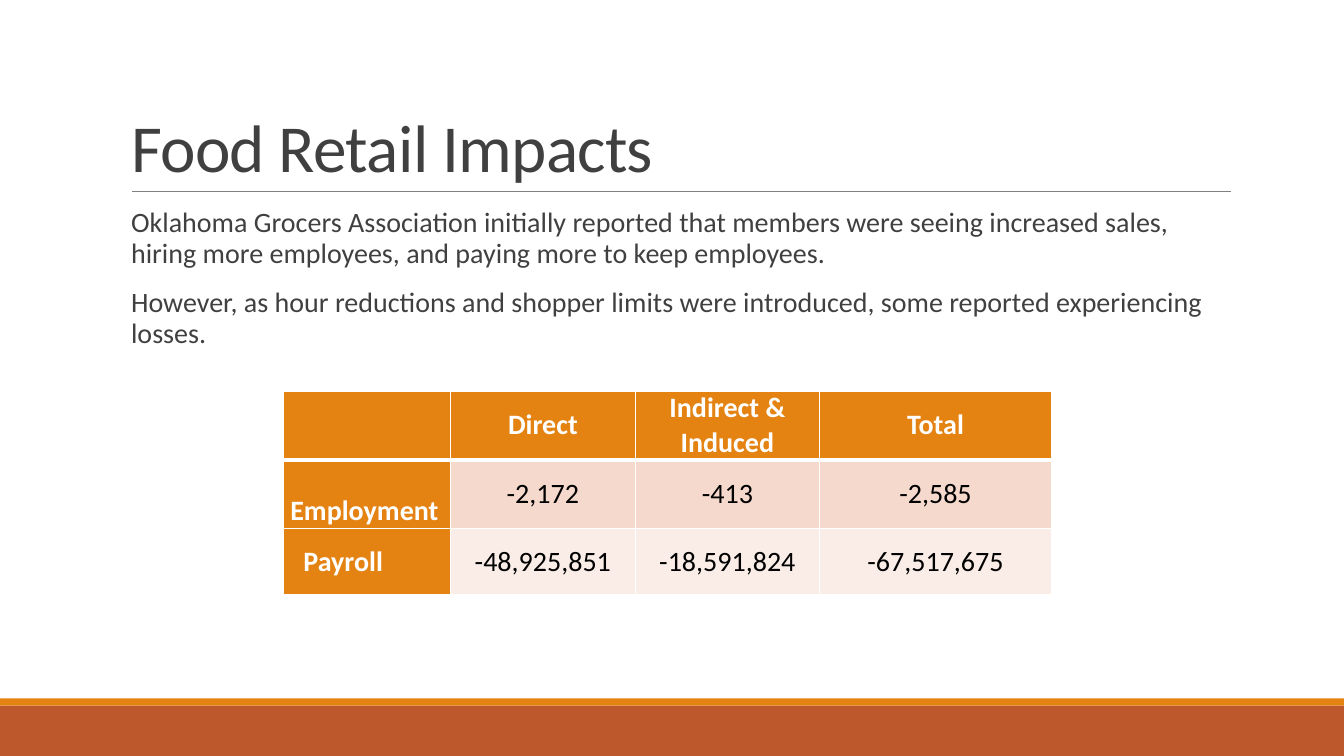
from lxml.etree import SubElement
from pptx import Presentation
from pptx.dml.color import RGBColor
from pptx.enum.shapes import MSO_CONNECTOR, MSO_SHAPE
from pptx.enum.text import MSO_ANCHOR, MSO_AUTO_SIZE, PP_ALIGN
from pptx.oxml.ns import qn
from pptx.util import Inches, Pt


def color(code):
    return RGBColor.from_string(code)


def write(para, text, size=20, ink="404040", bold=False, align=PP_ALIGN.LEFT,
          line=1.0, before=0, after=0, indent=0, track=0):
    para.alignment = align
    para.line_spacing = line
    para.space_before = Pt(before)
    para.space_after = Pt(after)
    props = para._p.get_or_add_pPr()
    props.set("marL", str(Inches(indent)))
    props.set("indent", "0")
    SubElement(props, qn("a:buNone"))
    run = para.add_run()
    run.text = text
    font = run.font
    font.name = "Calibri"
    font.size = Pt(size)
    font.bold = bold
    font.color.rgb = color(ink)
    if track:
        run._r.get_or_add_rPr().set("spc", str(round(track * 100)))


class Deck:
    orange, rust, white = "E48312", "BD582C", "FFFFFF"
    bands = ["F5D9CC", "FAEDE7"]

    def __init__(self):
        self.file = Presentation()
        self.file.slide_width = Inches(13.33)
        self.file.slide_height = Inches(7.5)
        self.slide = self.file.slides.add_slide(self.file.slide_layouts[1])
        self.shapes = self.slide.shapes

    def place(self, shape, left, top, width, height):
        shape.left, shape.top = Inches(left), Inches(top)
        shape.width, shape.height = Inches(width), Inches(height)
        shape.text_frame.auto_size = MSO_AUTO_SIZE.NONE
        shape.text_frame.word_wrap = True
        return shape.text_frame

    def title(self, text):
        frame = self.place(self.shapes.title, 1.2, 0.31, 11, 1.59)
        frame.vertical_anchor = MSO_ANCHOR.BOTTOM
        write(frame.paragraphs[0], text, size=48, line=0.85, track=-0.5)

    def body(self, items):
        frame = self.place(self.slide.placeholders[1], 1.2, 2.02, 11, 4.4)
        frame.margin_left = frame.margin_right = 0
        frame.vertical_anchor = MSO_ANCHOR.TOP
        for i, text in enumerate(items):
            para = frame.add_paragraph() if i else frame.paragraphs[0]
            write(para, text, line=0.9, before=12, after=2, indent=0.1)

    def bar(self, top, height, fill):
        bar = self.shapes.add_shape(MSO_SHAPE.RECTANGLE, 0, Inches(top),
                                    self.file.slide_width, Inches(height))
        bar.shadow.inherit = False
        bar.fill.solid()
        bar.fill.fore_color.rgb = color(fill)
        bar.line.fill.background()

    def rule(self, left, right, top):
        rule = self.shapes.add_connector(MSO_CONNECTOR.STRAIGHT, Inches(left),
                                         Inches(top), Inches(right), Inches(top))
        rule.line.color.rgb = color("808080")
        rule.line.width = Pt(0.5)
        SubElement(rule._element.spPr, qn("a:effectLst"))

    def border(self, cell, row):
        props = cell._tc.get_or_add_tcPr()
        thick = {"T": row == 1, "B": row == 0}
        for side in "LRTB":
            width = Pt(3 if thick.get(side) else 1)
            edge = SubElement(props, qn("a:ln" + side), w=str(width))
            fill = SubElement(edge, qn("a:solidFill"))
            SubElement(fill, qn("a:srgbClr"), val=self.white)

    def cell(self, cell, text, row, col):
        head = row == 0 or col == 0
        self.border(cell, row)
        cell.fill.solid()
        cell.fill.fore_color.rgb = color(self.orange if head else self.bands[row - 1])
        cell.margin_left = cell.margin_right = Inches(0.07)
        cell.margin_top = cell.margin_bottom = 0
        low = text == "Employment"
        cell.vertical_anchor = MSO_ANCHOR.BOTTOM if low else MSO_ANCHOR.MIDDLE
        if text:
            write(cell.text_frame.paragraphs[0], text, bold=head,
                  ink=self.white if head else "000000",
                  align=PP_ALIGN.CENTER if col else PP_ALIGN.LEFT,
                  indent=0.13 if text == "Payroll" else 0)

    def table(self, left, top, cols, rows, data):
        table = self.shapes.add_table(len(rows), len(cols), Inches(left), Inches(top),
                                      Inches(sum(cols)), Inches(sum(rows))).table
        table.first_row = table.horz_banding = False
        for col, width in zip(table.columns, cols):
            col.width = Inches(width)
        for r, height in enumerate(rows):
            table.rows[r].height = Inches(height)
            for c, text in enumerate(data[r]):
                self.cell(table.cell(r, c), text, r, c)


def main():
    deck = Deck()
    deck.bar(7, 0.5, deck.rust)
    deck.bar(6.93, 0.07, deck.orange)
    deck.rule(1.31, 12.21, 1.9)
    deck.title("Food Retail Impacts")
    deck.body([
        "Oklahoma Grocers Association initially reported that members were seeing "
        "increased sales, hiring more employees, and paying more to keep employees.",
        "However, as hour reductions and shopper limits were introduced, "
        "some reported experiencing losses.",
    ])
    deck.table(2.81, 3.88, [1.66, 1.83, 1.83, 2.3], [0.68, 0.68, 0.66], [
        ["", "Direct", "Indirect & Induced", "Total"],
        ["Employment", "-2,172", "-413", "-2,585"],
        ["Payroll", "-48,925,851", "-18,591,824", "-67,517,675"],
    ])
    deck.file.save("out.pptx")


if __name__ == "__main__":
    main()
